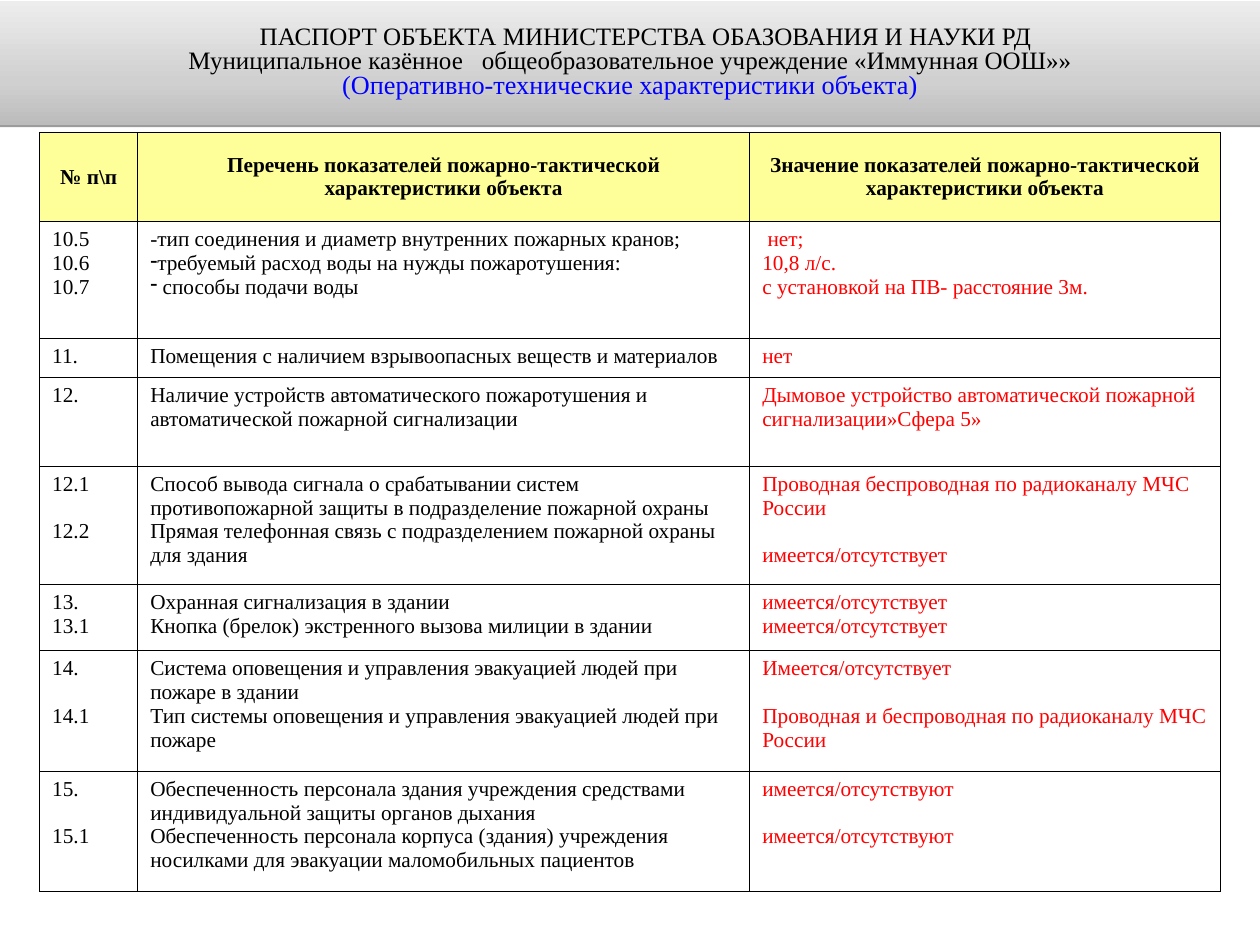
"""Build the fire-safety passport slide: a title banner above a table of indicators."""
from lxml import etree
from copy import deepcopy
from pptx import Presentation
from pptx.dml.color import RGBColor
from pptx.enum.shapes import MSO_SHAPE
from pptx.enum.text import MSO_ANCHOR, PP_ALIGN
from pptx.oxml.ns import qn
from pptx.util import Inches, Pt

RECTANGLE = MSO_SHAPE.RECTANGLE
MIDDLE, TOP = MSO_ANCHOR.MIDDLE, MSO_ANCHOR.TOP
CENTER, LEFT = PP_ALIGN.CENTER, PP_ALIGN.LEFT
FONT = "Times New Roman"
COLORS = {"text": "000000", "value": "FF0000", "subtitle": "0000FF", "header": "FFFF99",
          "body": "FFFFFF", "border": "000000", "dark": "BCBCBC", "mid": "D0D0D0", "light": "EDEDED"}
COLUMNS = [1.09, 6.8, 5.23]
BLANK_LINE = 19

HEADER = [["№ п\\п"],
          ["Перечень показателей пожарно-тактической характеристики объекта"],
          ["Значение показателей пожарно-тактической характеристики объекта"]]
ROWS = [
    (0.99, 0, HEADER),
    (1.3, 0, [["10.5", "10.6", "10.7"],
              ["-тип соединения и диаметр внутренних пожарных кранов;",
               "-требуемый расход воды на нужды пожаротушения:",
               "- способы подачи воды"],
              [" нет;", "10,8 л/с.", "с установкой на ПВ- расстояние 3м."]]),
    (0.43, 0, [["11."], ["Помещения с наличием взрывоопасных веществ и материалов"], ["нет"]]),
    (0.99, 0, [["12."],
               ["Наличие устройств автоматического пожаротушения и автоматической пожарной сигнализации"],
               ["Дымовое устройство автоматической пожарной сигнализации»Сфера 5»"]]),
    (1.31, BLANK_LINE, [["12.1", "12.2"],
                        ["Способ вывода сигнала о срабатывании систем противопожарной защиты "
                         "в подразделение пожарной охраны",
                         "Прямая телефонная связь с подразделением пожарной охраны для здания"],
                        ["Проводная беспроводная по радиоканалу МЧС России", "имеется/отсутствует"]]),
    (0.74, 0, [["13.", "13.1"],
               ["Охранная сигнализация в здании",
                "Кнопка (брелок) экстренного вызова милиции в здании"],
               ["имеется/отсутствует", "имеется/отсутствует"]]),
    (1.34, BLANK_LINE, [["14.", "14.1"],
                        ["Система оповещения и управления эвакуацией людей при пожаре в здании",
                         "Тип системы оповещения и управления эвакуацией людей при пожаре"],
                        ["Имеется/отсутствует", "Проводная и беспроводная по радиоканалу МЧС России"]]),
    (1.34, BLANK_LINE, [["15.", "15.1"],
                        ["Обеспеченность персонала здания учреждения средствами индивидуальной "
                         "защиты органов дыхания",
                         "Обеспеченность персонала корпуса (здания) учреждения носилками "
                         "для эвакуации маломобильных пациентов"],
                        ["имеется/отсутствуют", "имеется/отсутствуют"]]),
]
TITLE = [(["ПАСПОРТ ОБЪЕКТА МИНИСТЕРСТВА ОБАЗОВАНИЯ И НАУКИ РД"], 20, "text", 25),
         (["Муниципальное казённое", " ", "общеобразовательное учреждение «Иммунная ООШ»»"], 20, "text", 0),
         (["(Оперативно-технические характеристики объекта)"], 21, "subtitle", 0)]


def set_font(para, size, color, bold=False):
    para.font.name, para.font.size, para.font.bold = FONT, Pt(size), bold
    para.font.color.rgb = RGBColor.from_string(COLORS[color])


def add_border(cell):
    properties = cell._tc.get_or_add_tcPr()
    for side in ("a:lnL", "a:lnR", "a:lnT", "a:lnB"):
        line = etree.SubElement(properties, qn(side), w=str(Pt(1)))
        fill = etree.SubElement(line, qn("a:solidFill"))
        etree.SubElement(fill, qn("a:srgbClr"), val=COLORS["border"])


deck = Presentation()
deck.slide_width, deck.slide_height = Inches(14), Inches(10.5)
page = deck.slides.add_slide(deck.slide_layouts[6])

heights = [row[0] for row in ROWS]
frame = page.shapes.add_table(len(ROWS), len(COLUMNS), Inches(0.44), Inches(1.47),
                              Inches(sum(COLUMNS)), Inches(sum(heights)))
table = frame.table
table.first_row = table.horz_banding = False
for column, width in zip(table.columns, COLUMNS):
    column.width = Inches(width)

for row_index, (height, gap, contents) in enumerate(ROWS):
    table.rows[row_index].height = Inches(height)
    is_header = row_index == 0
    for column_index, lines in enumerate(contents):
        cell = table.cell(row_index, column_index)
        add_border(cell)
        cell.fill.solid()
        cell.fill.fore_color.rgb = RGBColor.from_string(COLORS["header" if is_header else "body"])
        cell.margin_left = cell.margin_right = Inches(0.14)
        cell.margin_top = cell.margin_bottom = Inches(0.07)
        cell.vertical_anchor = MIDDLE if is_header else TOP
        for line_index, line in enumerate(lines):
            para = cell.text_frame.add_paragraph() if line_index else cell.text_frame.paragraphs[0]
            if line_index and line.startswith("-"):
                etree.SubElement(para._p.get_or_add_pPr(), qn("a:buChar"), char="-")
                line = line[1:]
            para.add_run().text = line
            para.alignment = CENTER if is_header else LEFT
            if line_index and column_index != 1:
                para.space_before = Pt(gap)
            is_value = column_index == 2 and not is_header
            set_font(para, 17, "value" if is_value else "text", is_header)

banner = page.shapes.add_shape(RECTANGLE, 0, Inches(0.01), deck.slide_width, Inches(1.38))
banner.fill.gradient()
banner.fill.gradient_angle = 90
last_stop = banner._element.spPr.findall(".//" + qn("a:gs"))[-1]
last_stop.addnext(deepcopy(last_stop))
for stop, position, color in zip(banner.fill.gradient_stops, (0, 0.35, 1), ("dark", "mid", "light")):
    stop.position = position
    stop.color.rgb = RGBColor.from_string(COLORS[color])
banner.line.fill.background()
banner.shadow.inherit = False
effects = banner._element.spPr.find(qn("a:effectLst"))
shadow = etree.SubElement(effects, qn("a:outerShdw"), blurRad="0", dist=str(Pt(1.6)),
                          dir="5400000", rotWithShape="0")
shade = etree.SubElement(shadow, qn("a:srgbClr"), val=COLORS["border"])
etree.SubElement(shade, qn("a:alpha"), val="38000")

box = banner.text_frame
box.word_wrap = True
box.vertical_anchor = MIDDLE
box.margin_left = box.margin_right = Inches(0.12)
box.margin_top = box.margin_bottom = Inches(0.06)
for index, (spans, size, color, indent) in enumerate(TITLE):
    para = box.add_paragraph() if index else box.paragraphs[0]
    para.alignment, para.line_spacing = CENTER, 0.8
    para._p.get_or_add_pPr().set("marL", str(Pt(indent)))
    set_font(para, size, color)
    for text in spans:
        span = para.add_run()
        span.text = text
        if text == " ":
            span._r.get_or_add_rPr().set("spc", "1000")

deck.save("out.pptx")
